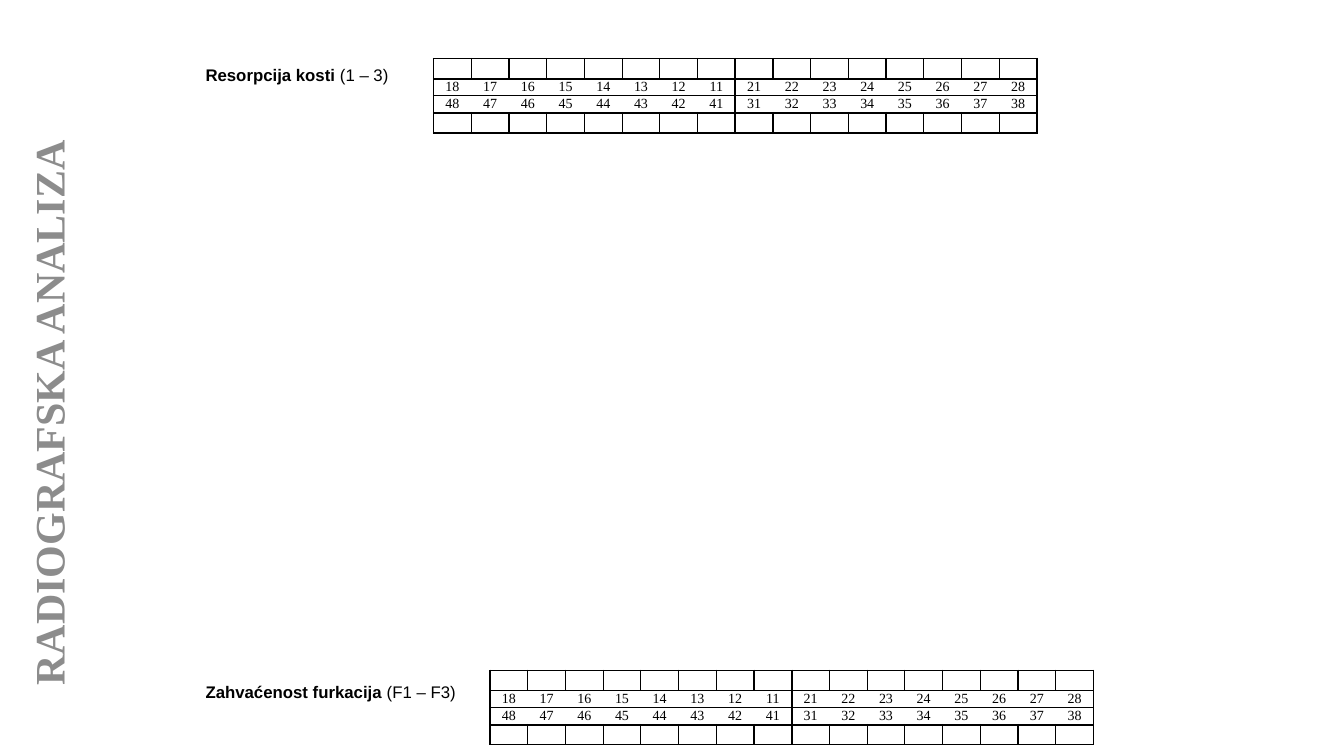
from lxml import etree
from pptx import Presentation
from pptx.dml.color import RGBColor
from pptx.enum.text import MSO_ANCHOR, MSO_AUTO_SIZE, PP_ALIGN
from pptx.oxml.ns import qn
from pptx.util import Inches, Pt

BLACK = RGBColor(0x00, 0x00, 0x00)
GRAY = RGBColor(0x8C, 0x8C, 0x8C)
SANS = "Arial"
SERIF = "Times New Roman"
LEFT, CENTER = PP_ALIGN.LEFT, PP_ALIGN.CENTER
TOP, MIDDLE = MSO_ANCHOR.TOP, MSO_ANCHOR.MIDDLE
NO_AUTOSIZE, GROW = MSO_AUTO_SIZE.NONE, MSO_AUTO_SIZE.SHAPE_TO_FIT_TEXT

THIN, THICK = Pt(1), Pt(1.5)
TEETH_PER_SIDE = 8
ROW_HEIGHTS = (0.2, 0.17, 0.17, 0.2)
ROW_EDGES = (THIN, THICK, THIN, THICK, THIN)
UPPER_TEETH = [*range(18, 10, -1), *range(21, 29)]
LOWER_TEETH = [*range(48, 40, -1), *range(31, 39)]
CHART_ROWS = (None, UPPER_TEETH, LOWER_TEETH, None)


def add_text(paragraph, text, font=SANS, size=12, color=BLACK, bold=False, align=LEFT):
    paragraph.alignment = align
    run = paragraph.add_run()
    run.text = text
    run.font.name = font
    run.font.size = Pt(size)
    run.font.color.rgb = color
    run.font.bold = bold


def set_borders(cell, widths):
    properties = cell._tc.get_or_add_tcPr()
    for side, width in zip(("lnL", "lnR", "lnT", "lnB"), widths):
        border = etree.SubElement(properties, qn(f"a:{side}"), w=str(width))
        if width:
            ink = etree.SubElement(border, qn("a:solidFill"))
            etree.SubElement(ink, qn("a:srgbClr"), val=str(BLACK))
        else:
            etree.SubElement(border, qn("a:noFill"))


def column_edge(edge, numbered):
    if edge == TEETH_PER_SIDE:
        return THICK
    if numbered and 0 < edge < 2 * TEETH_PER_SIDE:
        return 0
    return THIN


def add_heading(slide, text, left, top, width, height):
    heading = slide.shapes.title
    heading.left, heading.top = Inches(left), Inches(top)
    heading.width, heading.height = Inches(width), Inches(height)
    heading.rotation = 270
    frame = heading.text_frame
    frame.word_wrap = True
    frame.auto_size = NO_AUTOSIZE
    frame.vertical_anchor = MIDDLE
    add_text(frame.paragraphs[0], text, font=SERIF, size=30, color=GRAY, bold=True)


def add_label(slide, finding, scale, left, top, width, height):
    label = slide.shapes.add_textbox(Inches(left), Inches(top), Inches(width), Inches(height))
    frame = label.text_frame
    frame.word_wrap = False
    frame.auto_size = GROW
    frame.vertical_anchor = TOP
    add_text(frame.paragraphs[0], finding, bold=True)
    add_text(frame.paragraphs[0], f" {scale}")


def add_tooth_chart(slide, left, top, width):
    columns = 2 * TEETH_PER_SIDE
    chart = slide.shapes.add_table(
        len(CHART_ROWS), columns, Inches(left), Inches(top), Inches(width), Inches(sum(ROW_HEIGHTS))
    ).table
    chart.first_row = False
    chart.horz_banding = False
    for column in chart.columns:
        column.width = Inches(width / columns)
    for row, (teeth, height) in enumerate(zip(CHART_ROWS, ROW_HEIGHTS)):
        chart.rows[row].height = Inches(height)
        for column in range(columns):
            cell = chart.cell(row, column)
            cell.margin_left = cell.margin_right = Inches(0.07)
            cell.margin_top = cell.margin_bottom = 0
            cell.vertical_anchor = MIDDLE
            numbered = teeth is not None
            set_borders(cell, (
                column_edge(column, numbered), column_edge(column + 1, numbered),
                ROW_EDGES[row], ROW_EDGES[row + 1],
            ))
            cell.fill.background()
            paragraph = cell.text_frame.paragraphs[0]
            if numbered:
                add_text(paragraph, str(teeth[column]), font=SERIF, size=10, align=CENTER)
            else:
                etree.SubElement(paragraph._p, qn("a:endParaRPr"), sz="1000")


def main():
    presentation = Presentation()
    presentation.slide_width, presentation.slide_height = Inches(13.33), Inches(7.5)
    slide = presentation.slides.add_slide(presentation.slide_layouts[5])
    add_label(slide, "Resorpcija kosti", "(1 – 3)", 1.94, 0.59, 2.03, 0.3)
    add_label(slide, "Zahvaćenost furkacija", "(F1 – F3)", 1.94, 6.71, 2.71, 0.3)
    add_heading(slide, "RADIOGRAFSKA ANALIZA", -3.09, 3.07, 7.13, 0.53)
    add_tooth_chart(slide, 4.3, 0.58, 5.99)
    add_tooth_chart(slide, 4.86, 6.65, 5.99)
    presentation.save("out.pptx")


if __name__ == "__main__":
    main()
